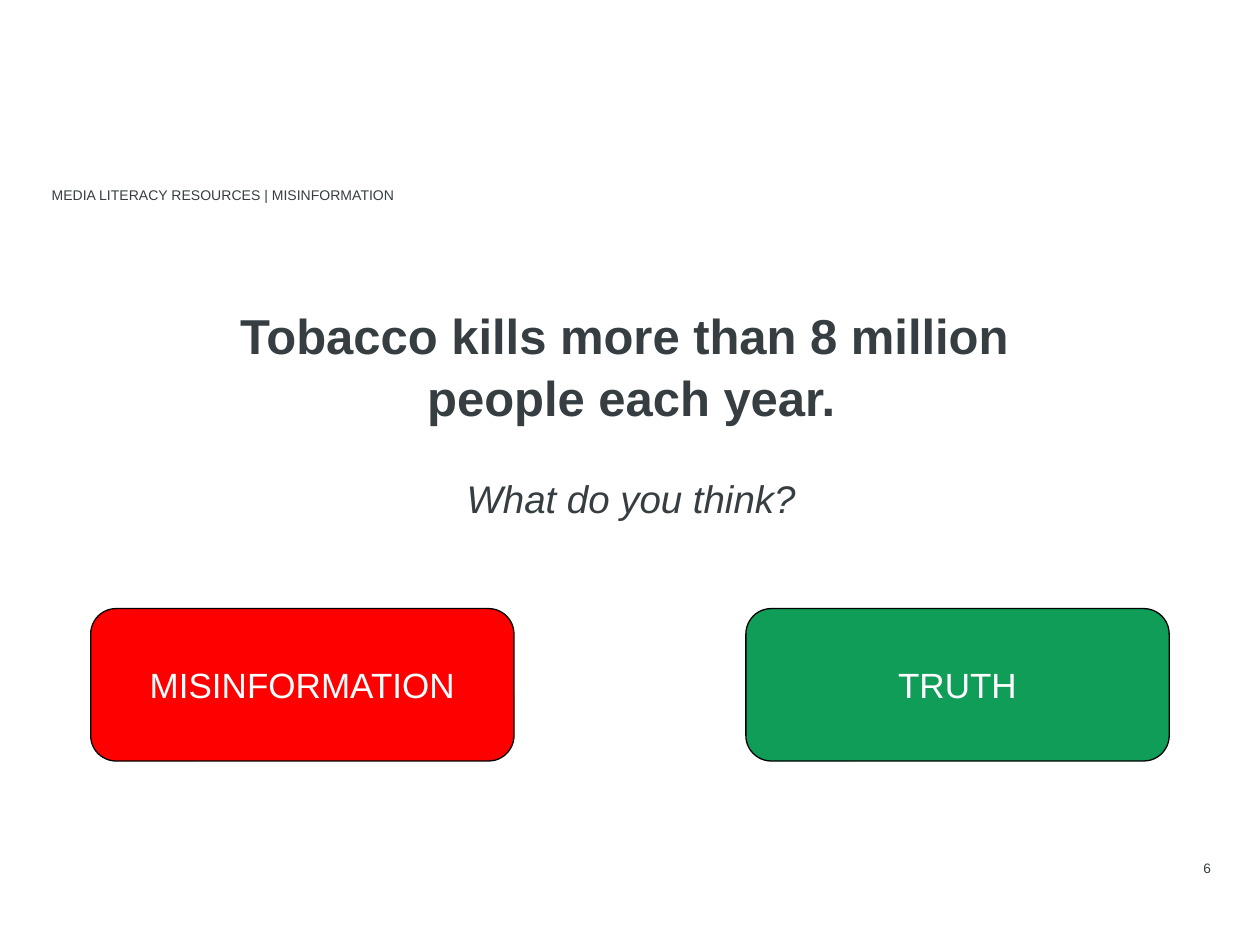
from pptx import Presentation
from pptx.dml.color import RGBColor
from pptx.enum.shapes import MSO_SHAPE
from pptx.enum.text import MSO_ANCHOR, PP_ALIGN
from pptx.util import Inches, Pt

INK = RGBColor(0x36, 0x3E, 0x42)
RED = RGBColor(0xFF, 0x00, 0x00)
GREEN = RGBColor(0x0F, 0x9D, 0x58)
WHITE = RGBColor(0xFF, 0xFF, 0xFF)
BLACK = RGBColor(0x00, 0x00, 0x00)


class Deck:
    font = "Arial"

    def __init__(self):
        self.prs = Presentation()
        self.prs.slide_width = Inches(10)
        self.prs.slide_height = Inches(7.5)
        self.s = self.prs.slides.add_slide(self.prs.slide_layouts[6])

    def frame(self, sp, inset, anchor):
        tf = sp.text_frame
        tf.word_wrap = True
        tf.vertical_anchor = anchor
        tf.margin_left = tf.margin_right = Inches(inset)
        tf.margin_top = tf.margin_bottom = Inches(inset)
        return tf

    def paragraph(self, p, text, size, color=INK, align=PP_ALIGN.LEFT,
                  bold=False, italic=False, before=0, spacing=1.0):
        p.text = text
        p.alignment = align
        p.line_spacing = spacing
        p.space_before = Pt(before)
        p.font.name = self.font
        p.font.size = Pt(size)
        p.font.color.rgb = color
        p.font.bold = bold
        p.font.italic = italic

    def text(self, x, y, w, h, lines, anchor=MSO_ANCHOR.TOP):
        sp = self.s.shapes.add_textbox(Inches(x), Inches(y), Inches(w), Inches(h))
        tf = self.frame(sp, 0, anchor)
        for i, line in enumerate(lines):
            p = tf.add_paragraph() if i else tf.paragraphs[0]
            self.paragraph(p, **line)

    def button(self, x, y, label, fill):
        sp = self.s.shapes.add_shape(MSO_SHAPE.ROUNDED_RECTANGLE, Inches(x),
                                     Inches(y), Inches(3.36), Inches(1.21))
        sp.shadow.inherit = False
        sp.fill.solid()
        sp.fill.fore_color.rgb = fill
        sp.line.color.rgb = BLACK
        sp.line.width = Pt(0.75)
        tf = self.frame(sp, 0.1, MSO_ANCHOR.MIDDLE)
        self.paragraph(tf.paragraphs[0], label, 20, WHITE, PP_ALIGN.CENTER)


def main():
    deck = Deck()
    deck.text(0.41, 1.48, 7, 0.2,
              [dict(text="MEDIA LITERACY RESOURCES | MISINFORMATION", size=8)])
    deck.text(8.42, 6.83, 1.19, 0.14,
              [dict(text="6", size=7.8, align=PP_ALIGN.RIGHT, spacing=0.8)],
              MSO_ANCHOR.MIDDLE)
    claim = dict(size=28, bold=True, align=PP_ALIGN.CENTER, spacing=1.05)
    deck.text(0.41, 2.4, 9.2, 1.81, [
        dict(claim, text="Tobacco kills more than 8 million "),
        dict(claim, text="people each year."),
        dict(text="What do you think?", size=22, italic=True,
             align=PP_ALIGN.CENTER, before=26.5, spacing=1.05),
    ])
    for x, label, fill in ((0.72, "MISINFORMATION", RED), (5.92, "TRUTH", GREEN)):
        deck.button(x, 4.83, label, fill)
    deck.prs.save("out.pptx")


if __name__ == "__main__":
    main()
